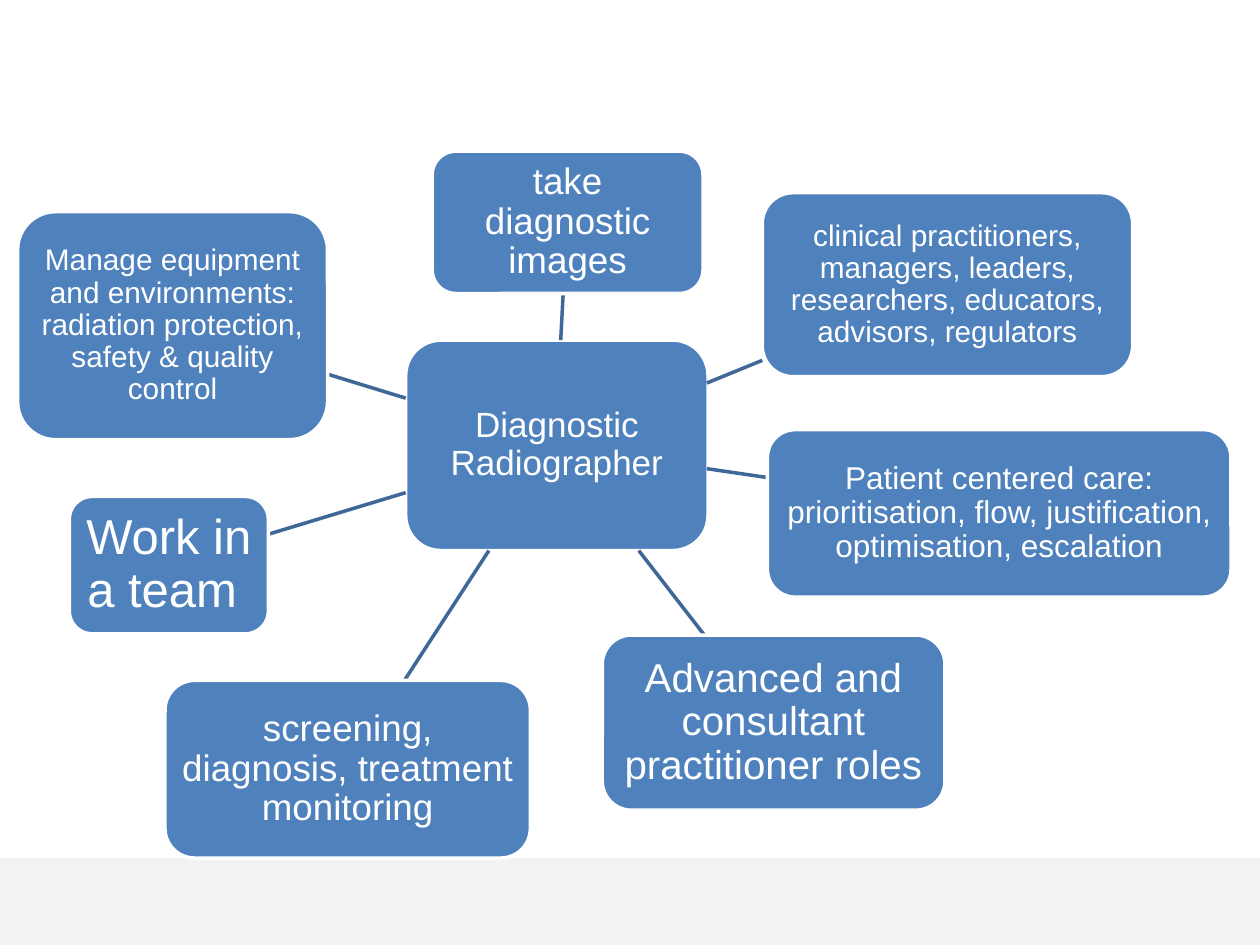
from lxml import etree
from pptx import Presentation
from pptx import util as u
from pptx.dml.color import RGBColor
from pptx.enum import shapes, text
from pptx.oxml.ns import qn

BLUE, SPOKE, WHITE, GREY = "4F81BD", "3F6797", "FFFFFF", "F2F2F2"

HUB = ("Diagnostic Radiographer", 20, 0.06, (3.22, 2.7, 2.4, 1.67))
BRANCHES = [
    ("take diagnostic images", 21, 0.06,
     (3.43, 1.2, 2.15, 1.13), (4.45, 2.7, 4.47, 2.33)),
    ("clinical practitioners, managers, leaders, researchers, educators, advisors, regulators",
     17, 0.05, (6.05, 1.53, 2.94, 1.46), (5.61, 3.04, 6.05, 2.86)),
    ("Patient centered care: prioritisation, flow, justification, optimisation, escalation",
     18, 0.05, (6.09, 3.41, 3.68, 1.33), (5.61, 3.72, 6.09, 3.79)),
    ("Advanced and consultant practitioner roles", 23, 0.06,
     (4.78, 5.04, 2.72, 1.39), (5.07, 4.37, 5.59, 5.04)),
    ("screening, diagnosis, treatment monitoring", 21, 0.06,
     (1.31, 5.4, 2.9, 1.41), (3.88, 4.37, 3.21, 5.4)),
    ("Work in a team ", 28, 0.08,
     (0.55, 3.94, 1.58, 1.09), (3.22, 3.91, 2.13, 4.24)),
    ("Manage equipment and environments: radiation protection, safety & quality control",
     17, 0.05, (0.14, 1.68, 2.46, 1.81), (3.22, 3.16, 2.6, 2.97)),
]


def colour(value):
    return RGBColor.from_string(value)


class MindMap:
    font = "Arial"
    line_width = u.Pt(2)

    def __init__(self, slide):
        self.slide = slide

    def box(self, kind, place, fill):
        shape = self.slide.shapes.add_shape(kind, *map(u.Inches, place))
        shape.shadow.inherit = False
        shape.fill.solid()
        shape.fill.fore_color.rgb = colour(fill)
        shape.line.fill.background()
        return shape

    def band(self, place):
        self.box(shapes.MSO_SHAPE.RECTANGLE, place, GREY)

    def node(self, label, size, inset, place):
        shape = self.box(shapes.MSO_SHAPE.ROUNDED_RECTANGLE, place, BLUE)
        shape.line.color.rgb = colour(WHITE)
        shape.line.width = self.line_width
        frame = shape.text_frame
        frame.word_wrap = True
        frame.vertical_anchor = text.MSO_ANCHOR.MIDDLE
        frame.margin_left = frame.margin_right = u.Inches(inset)
        frame.margin_top = frame.margin_bottom = u.Inches(inset)
        paragraph = frame.paragraphs[0]
        paragraph.alignment = text.PP_ALIGN.CENTER
        paragraph.line_spacing = 0.9
        run = paragraph.add_run()
        run.text = label
        run.font.name = self.font
        run.font.size = u.Pt(size)
        run.font.color.rgb = colour(WHITE)

    def spoke(self, ends):
        connector = self.slide.shapes.add_connector(
            shapes.MSO_CONNECTOR.STRAIGHT, *map(u.Inches, ends))
        connector.line.color.rgb = colour(SPOKE)
        connector.line.width = self.line_width
        etree.SubElement(connector._element.spPr, qn("a:effectLst"))


def main():
    presentation = Presentation()
    presentation.slide_width = u.Inches(10)
    presentation.slide_height = u.Inches(7.5)
    slide = presentation.slides.add_slide(presentation.slide_layouts[6])
    mind_map = MindMap(slide)
    mind_map.band((0, 6.81, 10, 0.69))
    mind_map.node(*HUB)
    for label, size, inset, place, ends in BRANCHES:
        mind_map.spoke(ends)
        mind_map.node(label, size, inset, place)
    presentation.save("out.pptx")


if __name__ == "__main__":
    main()
